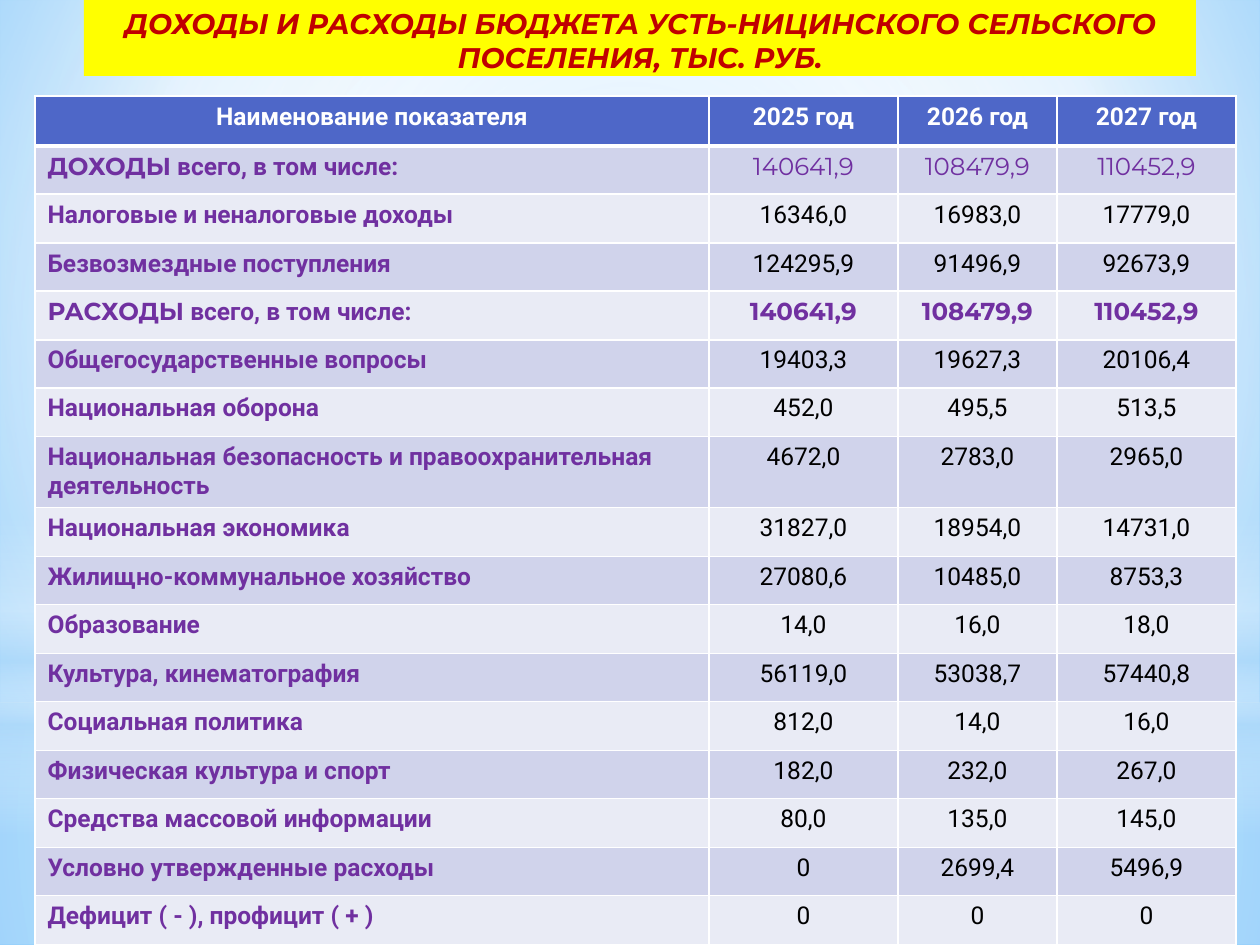
from dataclasses import dataclass

from lxml.etree import SubElement
from pptx import Presentation
from pptx.dml.color import RGBColor
from pptx.enum.shapes import MSO_SHAPE
from pptx.enum.text import MSO_ANCHOR, MSO_AUTO_SIZE, PP_ALIGN
from pptx.oxml import parse_xml
from pptx.oxml.ns import nsdecls, qn
from pptx.util import Emu, Pt

EMU_PER_PX = 914400 / 126


@dataclass(frozen=True)
class Theme:
    """Colours, fonts and type sizes of the slide."""
    display_font: str = "Montserrat"
    text_font: str = "Roboto"
    title_size: float = 16.2
    table_size: float = 14
    title_fill: str = "FFFF00"
    title_text: str = "C00000"
    header_fill: str = "4E67C8"
    bands: tuple = ("D0D3EB", "E9EBF5")
    accent: str = "7030A0"
    ink: str = "000000"
    white: str = "FFFFFF"
    mist: str = "B4DCFA"
    sky: str = "9ED5FF"
    deep_sky: str = "5BB9FF"


THEME = Theme()
TITLE = "ДОХОДЫ И РАСХОДЫ БЮДЖЕТА УСТЬ-НИЦИНСКОГО СЕЛЬСКОГО ПОСЕЛЕНИЯ, ТЫС. РУБ."
HEADERS = ("Наименование показателя", "2025 год", "2026 год", "2027 год")
INCOME, EXPENSES = "ДОХОДЫ", "РАСХОДЫ"
TOTAL_LABEL = " всего, в том числе:"
ROWS = (
    (INCOME, "140641,9", "108479,9", "110452,9"),
    ("Налоговые и неналоговые доходы", "16346,0", "16983,0", "17779,0"),
    ("Безвозмездные поступления", "124295,9", "91496,9", "92673,9"),
    (EXPENSES, "140641,9", "108479,9", "110452,9"),
    ("Общегосударственные вопросы", "19403,3", "19627,3", "20106,4"),
    ("Национальная оборона", "452,0", "495,5", "513,5"),
    ("Национальная безопасность и правоохранительная деятельность",
     "4672,0", "2783,0", "2965,0"),
    ("Национальная экономика", "31827,0", "18954,0", "14731,0"),
    ("Жилищно-коммунальное хозяйство", "27080,6", "10485,0", "8753,3"),
    ("Образование", "14,0", "16,0", "18,0"),
    ("Культура, кинематография", "56119,0", "53038,7", "57440,8"),
    ("Социальная политика", "812,0", "14,0", "16,0"),
    ("Физическая культура и спорт", "182,0", "232,0", "267,0"),
    ("Средства массовой информации", "80,0", "135,0", "145,0"),
    ("Условно утвержденные расходы", "0", "2699,4", "5496,9"),
    ("Дефицит ( - ), профицит ( + )", "0", "0", "0"),
)
COLUMN_WIDTHS = (674, 189, 159, 179)
HEADER_HEIGHT, ROW_HEIGHT, WRAPPED_HEIGHT = 50, 48, 71
WRAPPED_ROW = 7


def px(length):
    """Turn pixels into EMU."""
    return Emu(round(length * EMU_PER_PX))


def write(frame, text, *, font=THEME.text_font, size=THEME.table_size,
          color=THEME.ink, bold=False, italic=False, align=PP_ALIGN.LEFT):
    """Add one formatted run to the first paragraph of a text frame."""
    paragraph = frame.paragraphs[0]
    paragraph.alignment = align
    run = paragraph.add_run()
    run.text = text
    run.font.name = font
    run.font.size = Pt(size)
    run.font.bold = bold
    run.font.italic = italic
    run.font.color.rgb = RGBColor.from_string(color)


def set_gradient(fill, properties, stops, center=None):
    """Give a gradient from (position, colour, opacity) stops."""
    fill.solid()
    gradient = parse_xml(f'<a:gradFill {nsdecls("a")} rotWithShape="1"><a:gsLst/></a:gradFill>')
    for position, color, opacity in stops:
        stop = SubElement(gradient[0], qn("a:gs"), pos=str(position * 1000))
        shade = SubElement(stop, qn("a:srgbClr"), val=color)
        if opacity < 100:
            SubElement(shade, qn("a:alpha"), val=str(opacity * 1000))
    if center:
        circle = SubElement(gradient, qn("a:path"), path="circle")
        edges = {side: str(value * 1000) for side, value in zip("ltrb", center)}
        SubElement(circle, qn("a:fillToRect"), **edges)
    else:
        SubElement(gradient, qn("a:lin"), ang="5400000", scaled="0")
    properties.replace(properties.find(qn("a:solidFill")), gradient)


def add_glow(slide, box, kind, stops, center=None):
    """Add one borderless gradient shape of the backdrop."""
    shape = slide.shapes.add_shape(kind, *map(px, box))
    shape.shadow.inherit = False
    shape.line.fill.background()
    set_gradient(shape.fill, shape._element.spPr, stops, center)


def add_backdrop(slide, box):
    """Paint the sky background and its soft layers."""
    left, top, width, height = box
    white, mist = THEME.white, THEME.mist
    middle = (50, 50, 50, 50)
    horizon = 703
    background = slide.background.fill
    background.solid()
    properties = slide._element.find(f'{qn("p:cSld")}/{qn("p:bg")}/{qn("p:bgPr")}')
    set_gradient(background, properties, ((0, THEME.sky, 100), (60, white, 100),
                                          (100, THEME.deep_sky, 100)), (20, 10, 20, 60))
    add_glow(slide, (left, top + horizon, width, height - horizon), MSO_SHAPE.RECTANGLE,
             ((0, white, 91), (37, white, 76), (100, mist, 79)), middle)
    add_glow(slide, (left, top, width, horizon), MSO_SHAPE.RECTANGLE,
             ((0, white, 89), (48, white, 62), (100, mist, 79)), middle)
    add_glow(slide, (left, top + 519, width, 315), MSO_SHAPE.RECTANGLE,
             ((0, white, 0), (29, white, 30), (45, mist, 40),
              (55, white, 26), (65, mist, 60), (100, white, 0)))
    add_glow(slide, (left, top + 221, width, horizon), MSO_SHAPE.OVAL,
             ((0, white, 100), (56, white, 0)), middle)


def add_title(slide, box):
    """Place the title placeholder in front of the backdrop."""
    title = slide.shapes.title
    slide.shapes._spTree.append(title._element)
    title.left, title.top, title.width, title.height = map(px, box)
    title.fill.solid()
    title.fill.fore_color.rgb = RGBColor.from_string(THEME.title_fill)
    frame = title.text_frame
    frame.word_wrap = True
    frame.auto_size = MSO_AUTO_SIZE.NONE
    frame.vertical_anchor = MSO_ANCHOR.TOP
    write(frame, TITLE, font=THEME.display_font, size=THEME.title_size,
          color=THEME.title_text, bold=True, italic=True, align=PP_ALIGN.CENTER)


def style_cell(cell, color, top=1, bottom=1):
    """Fill a cell and draw its white borders, with widths in points."""
    properties = cell._tc.get_or_add_tcPr()
    for side, width in (("L", 1), ("R", 1), ("T", top), ("B", bottom)):
        line = SubElement(properties, qn(f"a:ln{side}"), w=str(Pt(width)))
        SubElement(SubElement(line, qn("a:solidFill")), qn("a:srgbClr"), val=THEME.white)
    cell.fill.solid()
    cell.fill.fore_color.rgb = RGBColor.from_string(color)


def fill_row(table, index, label, values):
    """Write one budget line, with totals set in the display font."""
    is_total = label in (INCOME, EXPENSES)
    font = THEME.display_font if is_total else THEME.text_font
    name_frame = table.cell(index, 0).text_frame
    write(name_frame, label, font=font, color=THEME.accent, bold=True)
    if is_total:
        write(name_frame, TOTAL_LABEL, color=THEME.accent, bold=True)
    for column, value in enumerate(values, 1):
        write(table.cell(index, column).text_frame, value, font=font,
              color=THEME.accent if is_total else THEME.ink,
              bold=label == EXPENSES, align=PP_ALIGN.CENTER)
    for cell in table.rows[index].cells:
        style_cell(cell, THEME.bands[(index - 1) % 2], top=3 if index == 1 else 1)


def add_budget_table(slide, box):
    """Build the table of income and expenses."""
    frame = slide.shapes.add_table(len(ROWS) + 1, len(HEADERS), *map(px, box))
    table = frame.table
    for column, width in zip(table.columns, COLUMN_WIDTHS):
        column.width = px(width)
    for index, row in enumerate(table.rows):
        row.height = px(ROW_HEIGHT + (index + 1) % 2)
    table.rows[0].height = px(HEADER_HEIGHT)
    table.rows[WRAPPED_ROW].height = px(WRAPPED_HEIGHT)
    for cell, text in zip(table.rows[0].cells, HEADERS):
        style_cell(cell, THEME.header_fill, bottom=3)
        write(cell.text_frame, text, color=THEME.white, bold=True, align=PP_ALIGN.CENTER)
    for index, (label, *values) in enumerate(ROWS, 1):
        fill_row(table, index, label, values)


def main():
    """Build and save the budget slide."""
    presentation = Presentation()
    presentation.slide_width, presentation.slide_height = px(1260), px(945)
    slide = presentation.slides.add_slide(presentation.slide_layouts[5])
    add_backdrop(slide, (0, 0, 1260, 945))
    add_title(slide, (84, 0, 1112, 76))
    add_budget_table(slide, (35, 96, sum(COLUMN_WIDTHS), 850))
    presentation.save("out.pptx")


if __name__ == "__main__":
    main()
